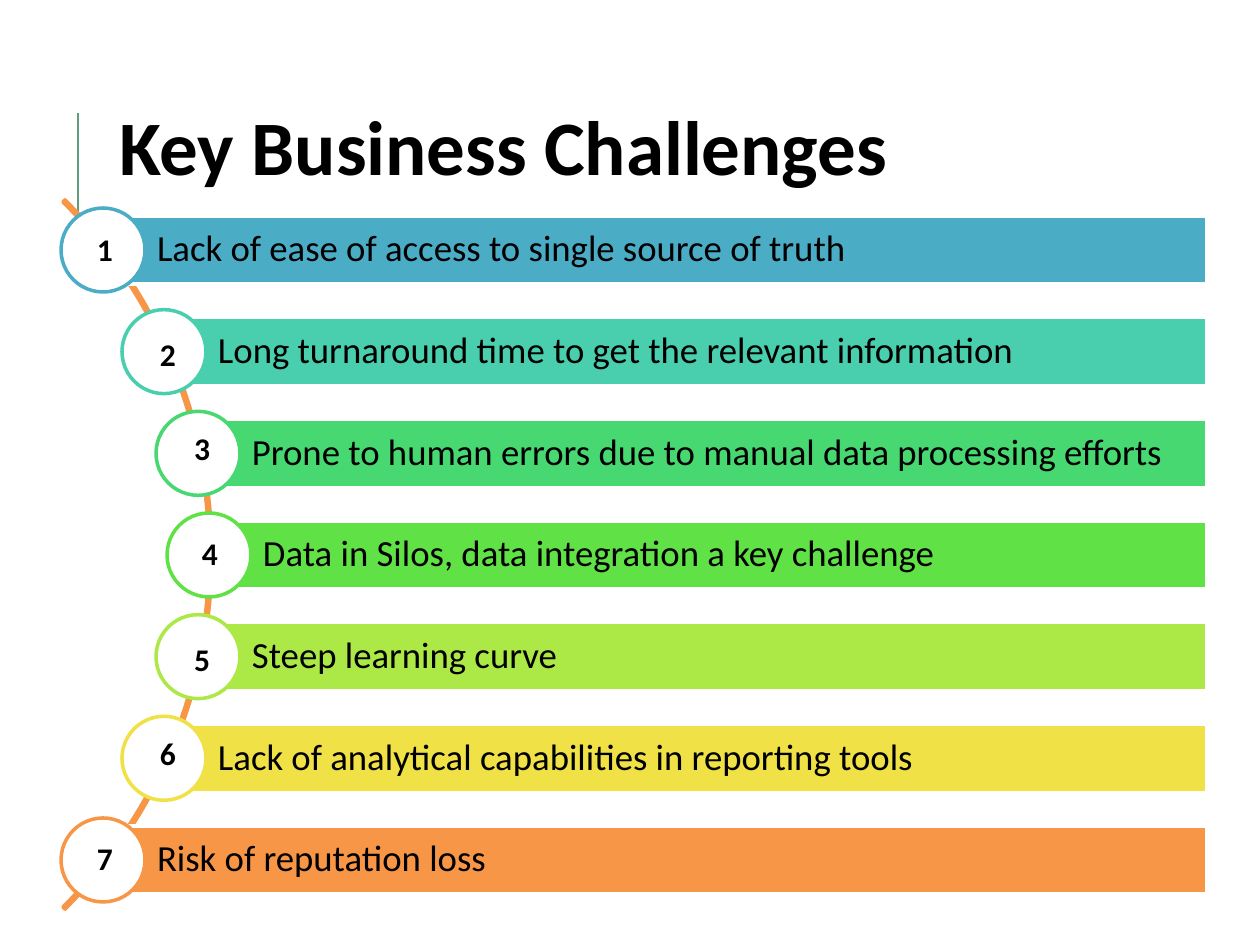
"""Build the Key Business Challenges slide: seven numbered bars along an arc."""
from lxml import etree
from pptx import Presentation
from pptx.dml.color import RGBColor
from pptx.enum.shapes import MSO_CONNECTOR, MSO_SHAPE as SHAPE
from pptx.enum.text import MSO_ANCHOR as ANCHOR
from pptx.oxml.ns import qn
from pptx.util import Pt

PX = 914400 / 126


def add_shape(kind, box, fill, line):
    sp = s.shapes.add_shape(kind, *(round(v * PX) for v in box))
    sp.shadow.inherit = False
    if fill:
        sp.fill.solid()
        sp.fill.fore_color.rgb = RGBColor.from_string(fill)
    else:
        sp.fill.background()
    sp.line.color.rgb = RGBColor.from_string(line)
    sp.line.width = Pt(2)
    return sp


def add_text(text, box, size, bold=False, anchor=ANCHOR.MIDDLE, spacing=1.0, insets=(13, 6, 13, 6), wrap=True):
    sp = s.shapes.add_textbox(*(round(v * PX) for v in box))
    tf = sp.text_frame
    tf.word_wrap = wrap
    tf.vertical_anchor = anchor
    tf.margin_left, tf.margin_top, tf.margin_right, tf.margin_bottom = (round(v * PX) for v in insets)
    p = tf.paragraphs[0]
    p.line_spacing = spacing
    r = p.add_run()
    r.text = text
    r.font.name, r.font.size, r.font.bold = "Calibri", Pt(size), bold
    r.font.color.rgb = RGBColor.from_string("000000")


prs = Presentation()
prs.slide_width, prs.slide_height = round(1260 * PX), round(945 * PX)
s = prs.slides.add_slide(prs.slide_layouts[6])

rule = s.shapes.add_connector(MSO_CONNECTOR.STRAIGHT, *(round(v * PX) for v in (78, 239, 78, 113)))
rule.line.color.rgb = RGBColor.from_string("5F9C80")
rule.line.width = Pt(1.5)
etree.SubElement(rule._element.spPr, qn("a:effectLst"))

add_text("Key Business Challenges", (106, 81, 1004, 145), 44, bold=True, spacing=0.8)

arc = add_shape(SHAPE.BLOCK_ARC, (-791, 53, 1003, 1003), None, "F79646")
for i, value in enumerate((189, 27, 0.003)):
    arc.adjustments[i] = value

challenges = [
    ("Lack of ease of access to single source of truth", "4BACC6", 103, 84, 224),
    ("Long turnaround time to get the relevant information", "49CFAE", 164, 147, 329),
    ("Prone to human errors due to manual data processing efforts", "47D872", 198, 181, 423),
    ("Data in Silos, data integration a key challenge", "60E146", 209, 189, 528),
    ("Steep learning curve", "ACE946", 198, 181, 634),
    ("Lack of analytical capabilities in reporting tools", "F0E146", 164, 147, 728),
    ("Risk of reputation loss", "F79646", 103, 84, 833),
]
FIRST_Y, LAST_Y, RIGHT, BAR_H, DOT = 250, 860, 1207, 68, 84
pitch = (LAST_Y - FIRST_Y) / (len(challenges) - 1)

for i, (text, color, x, _, _) in enumerate(challenges):
    y = FIRST_Y + i * pitch
    bar = (x, y - BAR_H / 2, RIGHT - x, BAR_H)
    add_shape(SHAPE.RECTANGLE, bar, color, "FFFFFF")
    add_text(text, bar, 21, spacing=0.9, insets=(54, 8, 8, 8))
    add_shape(SHAPE.OVAL, (x - DOT / 2, y - DOT / 2, DOT, DOT), "FFFFFF", color)

for number, (_, _, _, left, top) in enumerate(challenges, 1):
    add_text(str(number), (left, top, 42, 50), 18, bold=True, anchor=ANCHOR.TOP, wrap=False)

prs.save("out.pptx")
